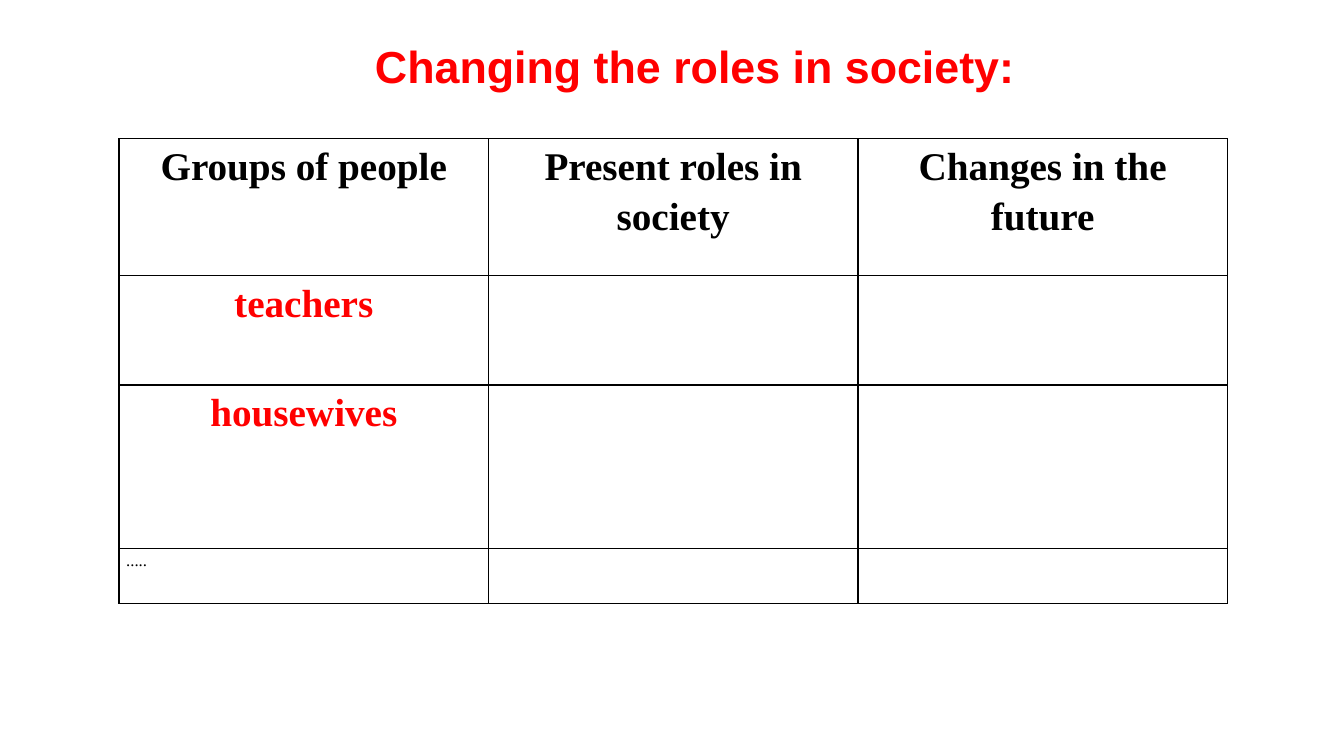
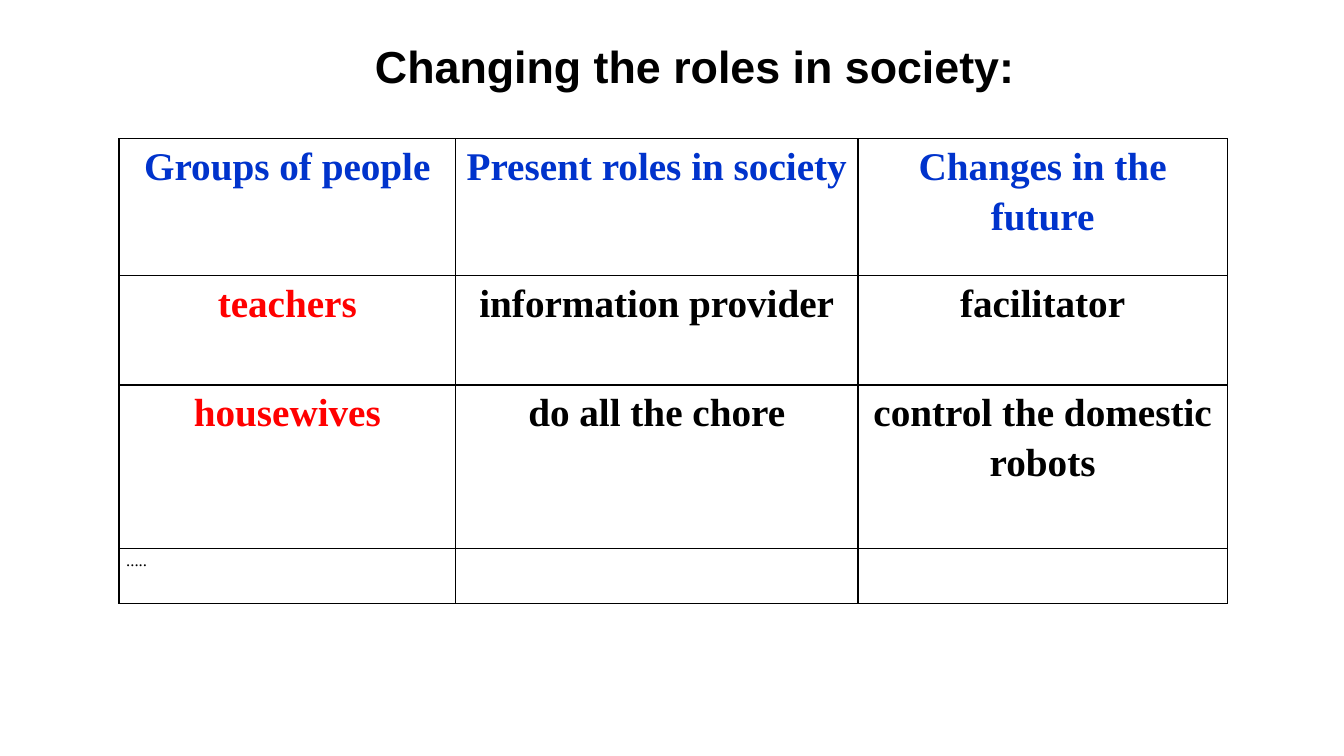
from lxml import etree
from pptx import Presentation
from pptx.dml.color import RGBColor
from pptx.enum.shapes import MSO_SHAPE
from pptx.enum.text import MSO_ANCHOR, MSO_AUTO_SIZE, PP_ALIGN
from pptx.oxml.ns import qn
from pptx.util import Cm, Pt

RED, BLUE, BLACK, WHITE = "FF0000", "0033CC", "000000", "FFFFFF"
TITLE = "Changing the roles in society:"
HEADERS = ["Groups of people", "Present roles in society", "Changes in the future"]
ROW_HEIGHTS = [3.45, 2.75, 4.12, 1.38]
SIDE_MARGIN = 0.18

# title colour, header colour, column widths, body rows
SLIDES = [
    (RED, BLACK, [9.31, 9.31, 9.31],
     [["teachers", "", ""], ["housewives", "", ""], [".....", "", ""]]),
    (BLACK, BLUE, [8.48, 10.14, 9.31],
     [["teachers", "information provider", "facilitator"],
      ["housewives", "do all the chore", "control the domestic robots"],
      [".....", "", ""]]),
]


def style(paragraph, font_name, size, color, bold, alignment):
    paragraph.alignment = alignment
    font = paragraph.font
    font.name, font.size, font.bold = font_name, Pt(size), bold
    font.color.rgb = RGBColor.from_string(color)


def add_borders(cell):
    properties = cell._tc.get_or_add_tcPr()
    for side in ("a:lnL", "a:lnR", "a:lnT", "a:lnB"):
        line = etree.SubElement(properties, qn(side), w=str(Pt(1)))
        fill = etree.SubElement(line, qn("a:solidFill"))
        etree.SubElement(fill, qn("a:srgbClr"), val=BLACK)


presentation = Presentation()
presentation.slide_width, presentation.slide_height = Cm(33.87), Cm(19.05)
blank_layout = presentation.slide_layouts[6]

for title_color, header_color, column_widths, body_rows in SLIDES:
    slide = presentation.slides.add_slide(blank_layout)

    title = slide.shapes.add_shape(
        MSO_SHAPE.RECTANGLE, Cm(9.2), Cm(0.84), Cm(16.9), Cm(1.63))
    title.shadow.inherit = False
    title.fill.solid()
    title.fill.fore_color.rgb = RGBColor.from_string(WHITE)
    title.line.fill.background()
    frame = title.text_frame
    frame.word_wrap = True
    frame.auto_size = MSO_AUTO_SIZE.SHAPE_TO_FIT_TEXT
    frame.vertical_anchor = MSO_ANCHOR.MIDDLE
    frame.text = TITLE
    style(frame.paragraphs[0], "Arial", 32, title_color, True, PP_ALIGN.JUSTIFY)

    rows = [HEADERS] + body_rows
    table = slide.shapes.add_table(
        len(rows), len(HEADERS), Cm(3), Cm(3.5),
        Cm(sum(column_widths)), Cm(sum(ROW_HEIGHTS))).table
    table.first_row = table.horz_banding = False
    for column, width in zip(table.columns, column_widths):
        column.width = Cm(width)
    for row, height in zip(table.rows, ROW_HEIGHTS):
        row.height = Cm(height)

    for row_index, texts in enumerate(rows):
        for column_index, text in enumerate(texts):
            cell = table.cell(row_index, column_index)
            add_borders(cell)
            cell.fill.background()
            cell.margin_left = cell.margin_right = Cm(SIDE_MARGIN)
            cell.margin_top = cell.margin_bottom = 0
            cell.text = text
            paragraph = cell.text_frame.paragraphs[0]
            paragraph.line_spacing = 1.15
            if row_index == len(rows) - 1:
                style(paragraph, "Times New Roman", 12, BLACK, False, PP_ALIGN.JUSTIFY)
                continue
            if row_index == 0:
                color = header_color
            else:
                color = RED if column_index == 0 else BLACK
            style(paragraph, "Times New Roman", 28, color, True, PP_ALIGN.CENTER)

presentation.save("out.pptx")
